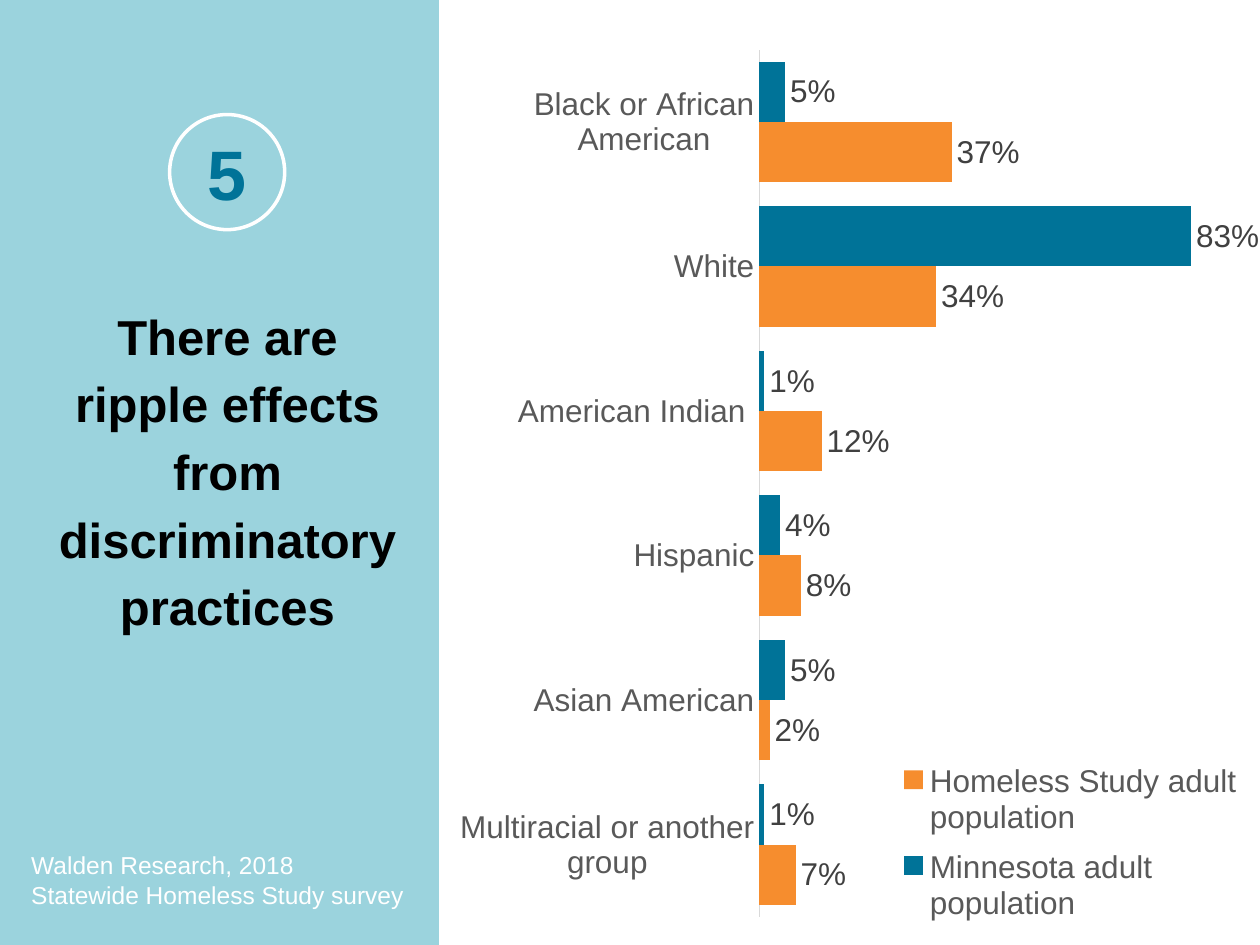
"""Build a slide comparing homeless and overall adult populations by race."""
from lxml.etree import SubElement
from pptx import Presentation
from pptx.chart.data import CategoryChartData
from pptx.dml.color import RGBColor
from pptx.enum.chart import XL_CHART_TYPE, XL_LABEL_POSITION, XL_LEGEND_POSITION, XL_TICK_LABEL_POSITION, XL_TICK_MARK
from pptx.enum.shapes import MSO_SHAPE
from pptx.enum.text import MSO_ANCHOR, MSO_AUTO_SIZE, PP_ALIGN
from pptx.oxml import parse_xml
from pptx.oxml.ns import nsdecls, qn
from pptx.util import Cm, Pt

AQUA = RGBColor(0x9B, 0xD3, 0xDD)
BLUE = RGBColor(0x00, 0x73, 0x98)
ORANGE = RGBColor(0xF6, 0x8D, 0x2E)
WHITE = RGBColor(0xFF, 0xFF, 0xFF)
BLACK = RGBColor(0x00, 0x00, 0x00)
GRAY = RGBColor(0x59, 0x59, 0x59)
DARK_GRAY = RGBColor(0x40, 0x40, 0x40)
LIGHT_GRAY = RGBColor(0xD9, 0xD9, 0xD9)


def set_font(font, size, color, bold=False):
    font.name = "Arial"
    font.size = Pt(size)
    font.color.rgb = color
    font.bold = bold


def make_layout(x, y, w, h, inner=False):
    layout = parse_xml(f"<c:layout {nsdecls('c')}><c:manualLayout/></c:layout>")
    values = [("layoutTarget", "inner")] if inner else []
    values += [("xMode", "edge"), ("yMode", "edge"), ("x", x), ("y", y), ("w", w), ("h", h)]
    for tag, val in values:
        SubElement(layout[0], qn(f"c:{tag}")).set("val", str(val))
    return layout


prs = Presentation()
prs.slide_width, prs.slide_height = Cm(25.4), Cm(19.05)
s = prs.slides.add_slide(prs.slide_layouts[5])

panel = s.shapes.add_shape(MSO_SHAPE.RECTANGLE, Cm(0), Cm(0), Cm(8.85), prs.slide_height)
panel.shadow.inherit = False
panel.fill.solid()
panel.fill.fore_color.rgb = AQUA
panel.line.fill.background()
s.shapes._spTree.remove(panel._element)
s.shapes._spTree.insert(2, panel._element)

source = s.shapes.add_textbox(Cm(0.38), Cm(17.02), Cm(8.41), Cm(2.03))
tf = source.text_frame
tf.word_wrap = True
p = tf.paragraphs[0]
for i, line in enumerate(["Walden Research, 2018 ", "Statewide Homeless Study survey"]):
    if i:
        p.add_line_break()
    r = p.add_run()
    r.text = line
    set_font(r.font, 14, WHITE)

title = s.shapes.title
title.left, title.top, title.width, title.height = Cm(0.71), Cm(5.87), Cm(7.75), Cm(11.15)
tf = title.text_frame
tf.word_wrap = True
tf.auto_size = MSO_AUTO_SIZE.NONE
tf.vertical_anchor = MSO_ANCHOR.TOP
p = tf.paragraphs[0]
p.alignment = PP_ALIGN.CENTER
p.line_spacing = 1.15
p.space_before = Pt(6)
r = p.add_run()
r.text = "There are ripple effects from discriminatory practices"
set_font(r.font, 28, BLACK, True)

badge = s.shapes.add_shape(MSO_SHAPE.OVAL, Cm(3.42), Cm(2.31), Cm(2.32), Cm(2.32))
badge.shadow.inherit = False
badge.fill.solid()
badge.fill.fore_color.rgb = AQUA
badge.line.color.rgb = WHITE
badge.line.width = Pt(2)
tf = badge.text_frame
tf.vertical_anchor = MSO_ANCHOR.MIDDLE
p = tf.paragraphs[0]
p.alignment = PP_ALIGN.CENTER
r = p.add_run()
r.text = "5"
set_font(r.font, 40, BLUE, True)

data = CategoryChartData(number_format="0%")
data.categories = ["Black or African American", "White", "American Indian ",
                   "Hispanic", "Asian American", "Multiracial or another group"]
data.add_series("Minnesota adult population", (0.05, 0.83, 0.01, 0.04, 0.05, 0.01))
data.add_series("Homeless Study adult population", (0.37, 0.34, 0.12, 0.08, 0.02, 0.07))
chart = s.shapes.add_chart(XL_CHART_TYPE.BAR_CLUSTERED, Cm(9.12), Cm(0.25),
                           Cm(16.28), Cm(18.8), data).chart
chart.has_title = False
set_font(chart.font, 10, BLACK)

plot = chart.plots[0]
plot.gap_width = 40
plot.overlap = 0
plot.vary_by_categories = False
for series, color in zip(plot.series, (BLUE, ORANGE)):
    series.format.fill.solid()
    series.format.fill.fore_color.rgb = color
    series.invert_if_negative = False
    labels = series.data_labels
    labels.show_value = True
    labels.number_format = "0%"
    labels.number_format_is_linked = False
    labels.position = XL_LABEL_POSITION.OUTSIDE_END
    set_font(labels.font, 18, DARK_GRAY)

cat_axis = chart.category_axis
cat_axis.reverse_order = True
cat_axis.major_tick_mark = XL_TICK_MARK.NONE
cat_axis.tick_label_position = XL_TICK_LABEL_POSITION.NEXT_TO_AXIS
cat_axis.format.line.color.rgb = LIGHT_GRAY
cat_axis.format.line.width = Pt(0.75)
set_font(cat_axis.tick_labels.font, 18, GRAY)

val_axis = chart.value_axis
val_axis.minimum_scale, val_axis.maximum_scale = 0, 0.9
val_axis.has_major_gridlines = False
val_axis.visible = False

chart.has_legend = True
legend = chart.legend
legend.position = XL_LEGEND_POSITION.BOTTOM
legend.include_in_layout = False
set_font(legend.font, 18, GRAY)

plot_area = chart._chartSpace.chart.plotArea
for parent in (plot_area, legend._element):
    for old in parent.findall(qn("c:layout")):
        parent.remove(old)
plot_area.insert(0, make_layout(0.38, 0.04, 0.58, 0.93, inner=True))
legend._element.find(qn("c:legendPos")).addnext(make_layout(0.54, 0.79, 0.45, 0.2))

prs.save("out.pptx")
